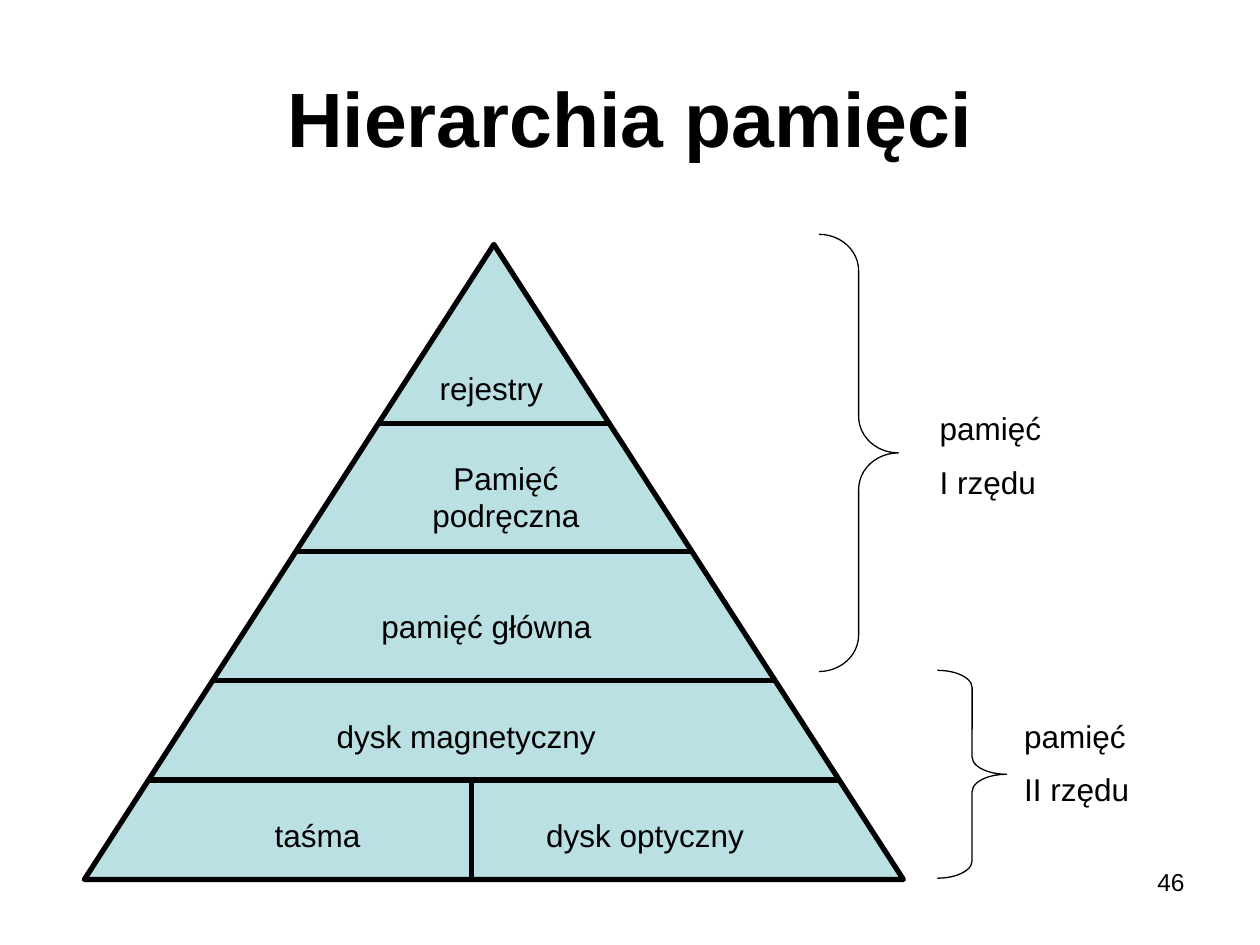
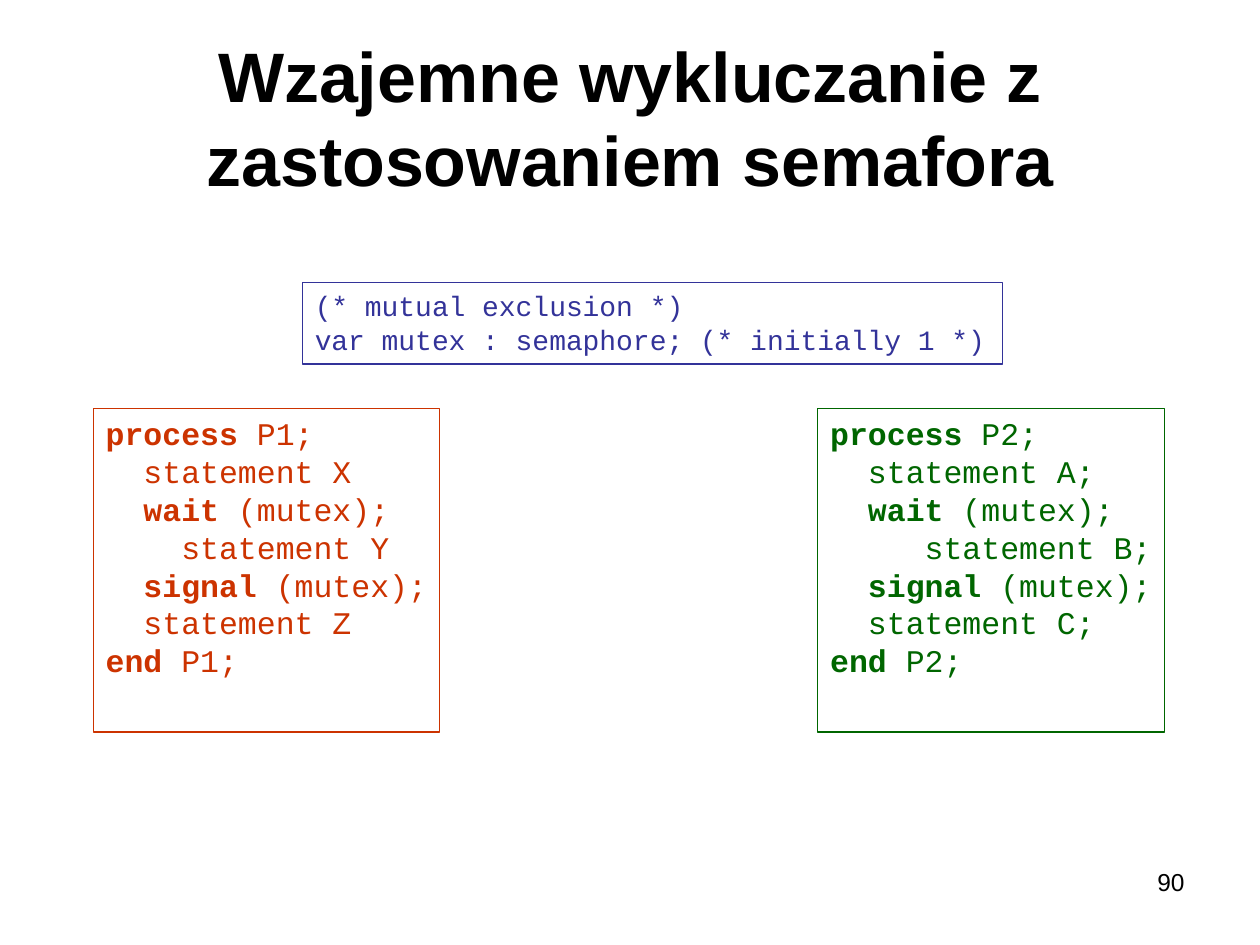
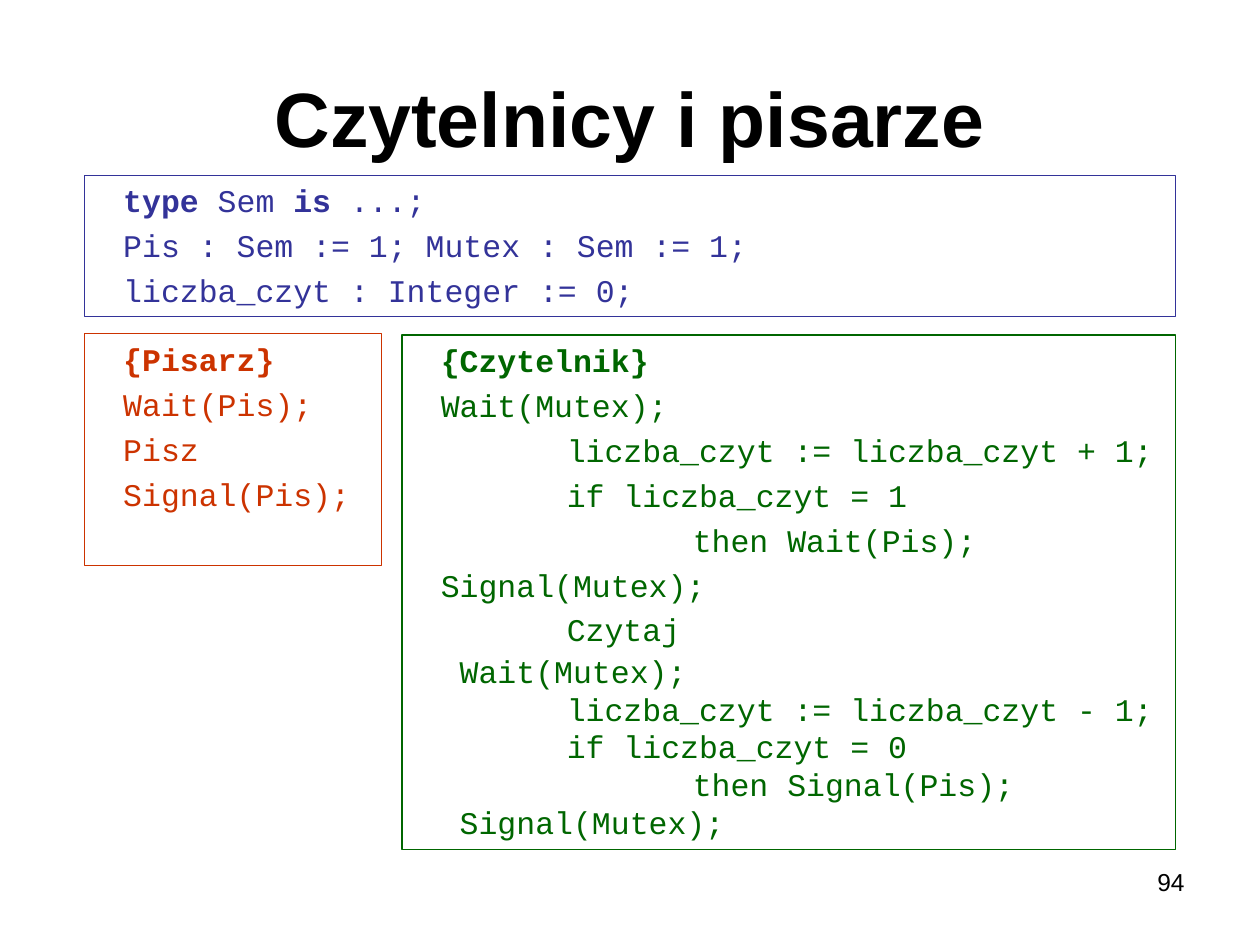
import pptx
import pptx.dml.color
import pptx.enum.shapes
import pptx.enum.text
import pptx.oxml
import pptx.util

Inches = pptx.util.Inches
Pt = pptx.util.Pt
Shape = pptx.enum.shapes.MSO_SHAPE
Align = pptx.enum.text.PP_ALIGN
Anchor = pptx.enum.text.MSO_ANCHOR

BLACK, TEAL = "000000", "BBE0E3"
BLUE, RED, GREEN = "333399", "CC3300", "006600"


def color(value):
    return pptx.dml.color.RGBColor.from_string(value)


class Painter:
    """Holds the deck, its style and the current page."""

    sans, mono = "Arial", "Courier New"

    def __init__(self):
        self.deck = pptx.Presentation()
        self.deck.slide_width, self.deck.slide_height = Inches(10), Inches(7.5)
        self.page = None

    def add_page(self, title, number, title_size=44):
        self.page = self.deck.slides.add_slide(self.deck.slide_layouts[6])
        self.text([title], 0.5, 0.3, 9, 1.25, title_size, Align.CENTER, bold=True, anchor=Anchor.MIDDLE)
        self.text([number], 7.17, 6.83, 2.33, 0.52, 14, Align.RIGHT)

    def style(self, para, name, size, hue, bold=None):
        para.font.name, para.font.size, para.font.bold = name, Pt(size), bold
        para.font.color.rgb = color(hue)

    def text(self, lines, left, top, width, height, size=18, align=Align.LEFT, bold=False, anchor=Anchor.TOP):
        box = self.page.shapes.add_textbox(Inches(left), Inches(top), Inches(width), Inches(height))
        frame = box.text_frame
        frame.word_wrap, frame.vertical_anchor = True, anchor
        frame.text = "\n".join(lines)
        for index, para in enumerate(frame.paragraphs):
            para.alignment = align
            para.space_before = Pt(size / 2 if index else 0)
            self.style(para, self.sans, size, BLACK, bold)

    def shape(self, kind, left, top, width, height, line=BLACK, weight=0.75, fill=None):
        shape = self.page.shapes.add_shape(kind, Inches(left), Inches(top), Inches(width), Inches(height))
        shape.shadow.inherit = False
        shape.line.color.rgb, shape.line.width = color(line), Pt(weight)
        if fill:
            shape.fill.solid()
            shape.fill.fore_color.rgb = color(fill)
        else:
            shape.fill.background()
        return shape

    def line(self, x1, y1, x2, y2, weight=3):
        line = self.page.shapes.add_connector(
            pptx.enum.shapes.MSO_CONNECTOR.STRAIGHT, Inches(x1), Inches(y1), Inches(x2), Inches(y2))
        line.line.color.rgb, line.line.width = color(BLACK), Pt(weight)
        properties = line._element.spPr
        properties.append(pptx.oxml.parse_xml(
            '<a:effectLst xmlns:a="http://schemas.openxmlformats.org/drawingml/2006/main"/>'))

    def code(self, lines, left, top, width, height, hue, size=18, margin=0.0, spaced=0):
        """Writes (indent, text) lines in a frame; bars enclose bold words."""
        frame = self.shape(Shape.RECTANGLE, left, top, width, height, hue).text_frame
        frame.word_wrap, frame.vertical_anchor, frame.margin_right = True, Anchor.TOP, 0
        for index, (indent, words) in enumerate(lines):
            para = frame.paragraphs[0] if index == 0 else frame.add_paragraph()
            para.alignment = Align.LEFT
            para.space_before = para.space_after = Pt(2 if index < spaced else 0)
            para._p.get_or_add_pPr().set("marL", str(Inches(margin + indent)))
            self.style(para, self.mono, size, hue)
            for part, words_part in enumerate(words.split("|")):
                if words_part:
                    span = para.add_run()
                    span.text, span.font.bold = words_part, part % 2 == 1


def hierarchy(painter):
    painter.add_page("Hierarchia pamięci", "46")
    left, top, width, height = 0.67, 1.94, 6.5, 5.04
    painter.shape(Shape.ISOSCELES_TRIANGLE, left, top, width, height, weight=3, fill=TEAL)
    center = left + width / 2
    for level in (3.36, 4.38, 5.4, 6.19):
        half = width / 2 * (level - top) / height
        painter.line(center - half, level, center + half, level)
    painter.line(3.74, 6.19, 3.74, top + height)
    labels = [
        ("rejestry", 3.35, 2.88, 1.1), ("Pamięć podręczna", 3.11, 3.59, 1.81),
        ("pamięć główna", 2.72, 4.77, 2.28), ("dysk magnetyczny", 2.56, 5.64, 2.28),
        ("taśma", 1.38, 6.43, 2.28), ("dysk optyczny", 3.98, 6.43, 2.28),
    ]
    for label, x, y, label_width in labels:
        painter.text([label], x, y, label_width, 0.4, align=Align.CENTER)
    upper = painter.shape(Shape.RIGHT_BRACE, 6.5, 1.86, 0.63, 3.47)
    lower = painter.shape(Shape.RIGHT_BRACE, 7.44, 5.32, 0.55, 1.65)
    upper.adjustments[0], lower.adjustments[0] = 0.46, 0.25
    painter.text(["pamięć", "I rzędu"], 7.36, 3.2, 1.1, 0.85)
    painter.text(["pamięć", "II rzędu"], 8.03, 5.64, 1.38, 0.85)


def mutual_exclusion(painter):
    painter.add_page("Wzajemne wykluczanie z zastosowaniem semafora", "90", 40)
    processes = [
        ("P2", 6.49, GREEN, 0.75, ("A;", "B;", "C;")),
        ("P1", 0.74, RED, 0.6, ("X", "Y", "Z")),
    ]
    for name, left, hue, inner, (first, second, third) in processes:
        painter.code([
            (0, f"|process| {name};"), (0.3, f"statement {first}"), (0.3, "|wait| (mutex);"),
            (inner, f"statement {second}"), (0.3, "|signal| (mutex);"),
            (0.3, f"statement {third}"), (0, f"|end| {name};"),
        ], left, 3.24, 2.75, 2.57, hue)
    painter.code([(0, "(* mutual exclusion *)"), (0, "var mutex : semaphore; (* initially 1 *)")],
                 2.4, 2.24, 5.56, 0.65, BLUE, 16)


def readers_writers(painter):
    painter.add_page("Czytelnicy i pisarze", "94")
    painter.code([
        (0, "|type| Sem |is| ...;"), (0, "Pis : Sem := 1; Mutex : Sem := 1;"),
        (0, "liczba_czyt : Integer := 0;"),
    ], 0.67, 1.39, 8.66, 1.12, BLUE, margin=0.21, spaced=3)
    painter.code([
        (0, "|{Czytelnik}|"), (0, "Wait(Mutex);"), (1, "liczba_czyt := liczba_czyt + 1;"),
        (1, "if liczba_czyt = 1"), (2, "then Wait(Pis);"), (0, "Signal(Mutex);"), (1, "Czytaj"),
        (0.15, "Wait(Mutex);"), (1, "liczba_czyt := liczba_czyt - 1;"),
        (1, "if liczba_czyt = 0"), (2, "then Signal(Pis);"), (0.15, "Signal(Mutex);"),
    ], 3.19, 2.66, 6.14, 4.08, GREEN, margin=0.21, spaced=7)
    painter.code([(0, "|{Pisarz}|"), (0, "Wait(Pis);"), (0, "Pisz"), (0, "Signal(Pis);")],
                 0.67, 2.65, 2.36, 1.84, RED, margin=0.21, spaced=4)


def main():
    painter = Painter()
    hierarchy(painter)
    mutual_exclusion(painter)
    readers_writers(painter)
    painter.deck.save("out.pptx")


if __name__ == "__main__":
    main()
